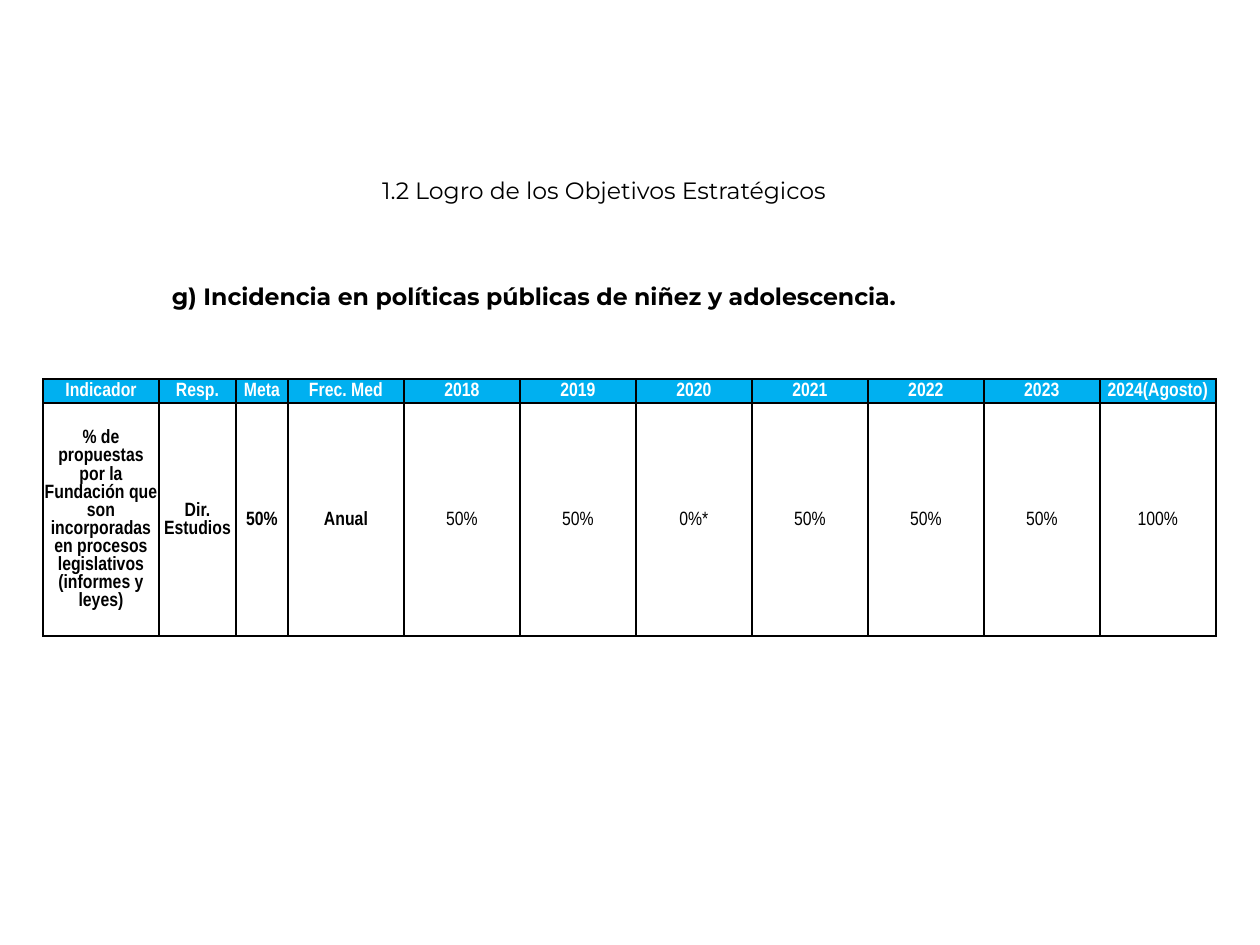
from dataclasses import dataclass
from lxml.etree import SubElement
from pptx import Presentation
from pptx.dml.color import RGBColor
from pptx.enum.text import MSO_ANCHOR, PP_ALIGN
from pptx.oxml.ns import qn
from pptx.util import Pt


@dataclass(frozen=True)
class Theme:
    ink: str = "000000"
    paper: str = "FFFFFF"
    head: str = "00B0F0"
    title: str = "Montserrat"
    grid: str = "Arial Narrow"
    large: float = 13.5
    small: float = 11


THEME = Theme()
YEARS = ["2018", "2019", "2020", "2021", "2022", "2023", "2024(Agosto)"]
ROWS = [
    ["Indicador", "Resp.", "Meta", "Frec. Med"] + YEARS,
    ["% de propuestas por la Fundación que son incorporadas en procesos "
     "legislativos (informes y leyes)", "Dir. Estudios", "50%", "Anual",
     "50%", "50%", "0%*", "50%", "50%", "50%", "100%"],
]
WIDTHS = [116, 77, 52] + [116] * 8
HEIGHTS = [24, 233]
LABELS = 4


def px(count):
    return round(count * 914400 / 126)


def style(para, face, size, color, bold, align):
    para.alignment = align
    font = para.font
    font.name, font.size, font.bold = face, Pt(size), bold
    font.color.rgb = RGBColor.from_string(color)


def heading(slide, box, text, bold, align):
    frame = slide.shapes.add_textbox(*map(px, box)).text_frame
    frame.word_wrap = True
    frame.vertical_anchor = MSO_ANCHOR.MIDDLE
    frame.margin_left, frame.margin_right = px(18), px(12)
    frame.text = text
    style(frame.paragraphs[0], THEME.title, THEME.large, THEME.ink, bold, align)


def border(cell):
    props = cell._tc.get_or_add_tcPr()
    for place, side in enumerate(("lnL", "lnR", "lnT", "lnB")):
        line = SubElement(props, qn(f"a:{side}"), w=str(Pt(1)))
        fill = SubElement(line, qn("a:solidFill"))
        SubElement(fill, qn("a:srgbClr"), val=THEME.ink)
        props.insert(place, line)


def paint(cell, text, head, label):
    cell.text = text
    cell.vertical_anchor = MSO_ANCHOR.MIDDLE
    cell.margin_left = cell.margin_right = cell.margin_top = px(1)
    cell.margin_bottom = 0
    if head or label:
        cell.fill.solid()
        cell.fill.fore_color.rgb = RGBColor.from_string(
            THEME.head if head else THEME.paper)
    else:
        cell.fill.background()
    border(cell)
    style(cell.text_frame.paragraphs[0], THEME.grid, THEME.small,
          THEME.paper if head else THEME.ink, head or label, PP_ALIGN.CENTER)


def grid(slide, left, top):
    box = (left, top, sum(WIDTHS), sum(HEIGHTS))
    table = slide.shapes.add_table(
        len(ROWS), len(WIDTHS), *map(px, box)).table
    table.first_row = table.horz_banding = False
    for col, width in zip(table.columns, WIDTHS):
        col.width = px(width)
    for row, height in zip(table.rows, HEIGHTS):
        row.height = px(height)
    for down, texts in enumerate(ROWS):
        for across, text in enumerate(texts):
            paint(table.cell(down, across), text, down == 0, across < LABELS)


def main():
    deck = Presentation()
    deck.slide_width, deck.slide_height = px(1260), px(945)
    slide = deck.slides.add_slide(deck.slide_layouts[6])
    heading(slide, (218, 152, 766, 77),
            "1.2 Logro de los Objetivos Estratégicos", False, PP_ALIGN.CENTER)
    heading(slide, (154, 258, 762, 77),
            "g) Incidencia en políticas públicas de niñez y adolescencia.",
            True, PP_ALIGN.LEFT)
    grid(slide, 43, 379)
    deck.save("out.pptx")


if __name__ == "__main__":
    main()
